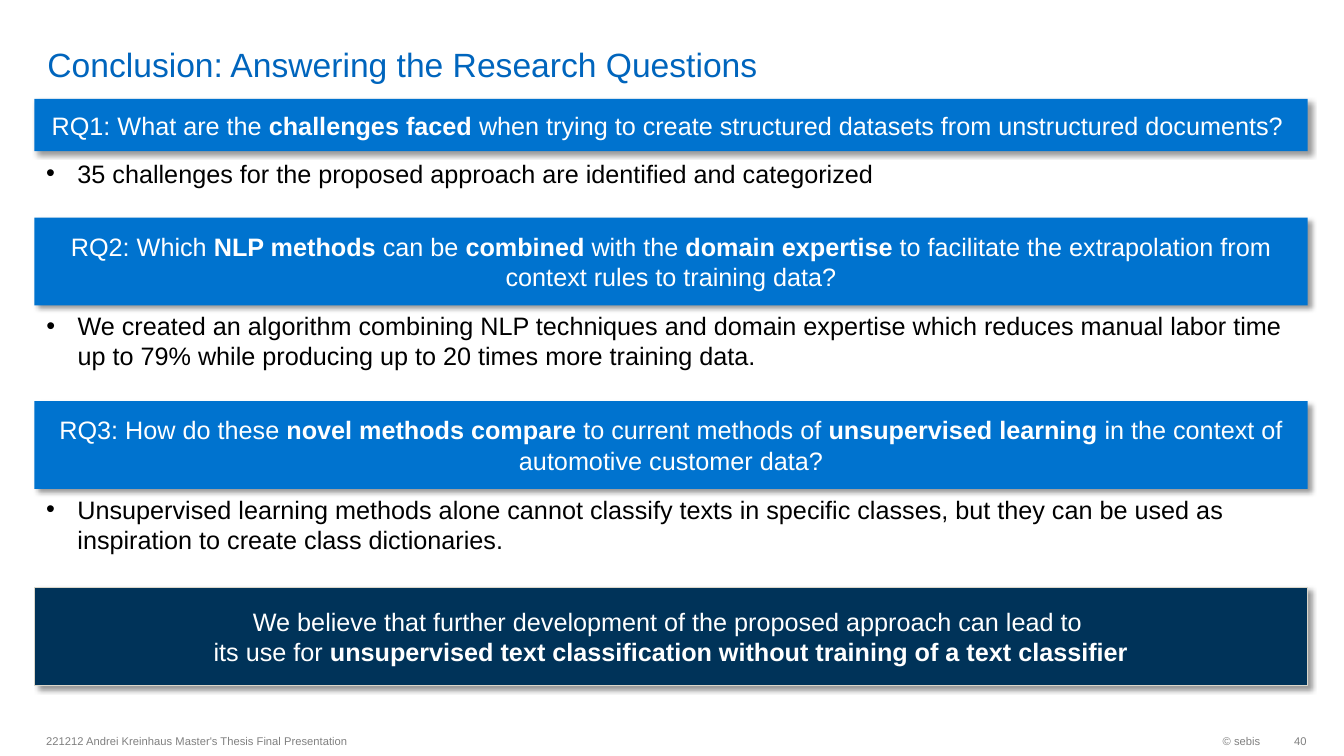
"""Build the conclusion slide that answers the three research questions."""
from dataclasses import dataclass

from lxml import etree
from pptx import Presentation
from pptx.dml.color import RGBColor
from pptx.enum.shapes import MSO_SHAPE
from pptx.enum.text import MSO_ANCHOR, MSO_AUTO_SIZE, PP_ALIGN
from pptx.oxml.ns import qn
from pptx.util import Inches, Pt

RECT = MSO_SHAPE.RECTANGLE
TOP, MIDDLE, BOTTOM = MSO_ANCHOR.TOP, MSO_ANCHOR.MIDDLE, MSO_ANCHOR.BOTTOM
LEFT, CENTER, RIGHT = PP_ALIGN.LEFT, PP_ALIGN.CENTER, PP_ALIGN.RIGHT

TITLE = "Conclusion: Answering the Research Questions"
SECTIONS = [
    {"question": "RQ1: What are the **challenges faced **when trying to create "
                 "structured datasets from unstructured documents? ",
     "answer": "35 challenges for the proposed approach are identified and categorized",
     "band": 0.52, "lead": 0.02, "body": 0.4, "width": 8.64},
    {"question": "RQ2: Which **NLP methods **can be **combined **with the "
                 "**domain expertise **to facilitate the extrapolation from "
                 "context rules to training data?",
     "answer": "We created an algorithm combining NLP techniques and domain expertise "
               "which reduces manual labor time up to 79% while producing up to "
               "20 times more training data.",
     "band": 0.87, "lead": 0, "body": 0.71, "width": 12.6},
    {"question": "RQ3: How do these **novel methods compare** to current methods of "
                 "**unsupervised learning **in the context of automotive customer data?",
     "answer": "Unsupervised learning methods alone cannot classify texts in specific "
               "classes, but they can be used as inspiration to create class dictionaries.",
     "band": 0.87, "lead": 0, "body": 0.71, "width": 12.6},
]
OUTLOOK = [
    "We believe that further development of the proposed approach can lead to ",
    "its use for **unsupervised text classification without training of a text classifier**",
]
FOOTER = [
    ("221212 Andrei Kreinhaus Master's Thesis Final Presentation", 0.36, 6.3, LEFT, 0.1),
    ("© sebis", 10.26, 2.34, RIGHT, 0.1),
    ("40", 12.6, 0.36, RIGHT, 0),
]

SLIDE_W, SLIDE_H = 13.33, 7.5
BAND_X, BAND_W = 0.34, 12.63
TEXT_X = 0.36
FIRST_Y, GAP = 0.98, 0.24
OUTLOOK_H, OUTLOOK_BOTTOM = 0.97, 6.8
FOOTER_Y, FOOTER_H = 7.19, 0.32
INDENT = 0.31


@dataclass(frozen=True)
class Theme:
    """Colours, font and type sizes."""
    font: str = "Arial"
    title: str = "0065BD"
    band: str = "0073CF"
    outlook: str = "003359"
    edge: str = "DAD7CB"
    white: str = "FFFFFF"
    text: str = "000000"
    muted: str = "808080"
    title_size: int = 24
    body_size: int = 18
    footer_size: int = 8


T = Theme()


def place(sp, x, y, w, h):
    """Move and size a shape in inches."""
    sp.left, sp.top, sp.width, sp.height = (Inches(v) for v in (x, y, w, h))
    return sp


def add_bullet(p):
    """Give a paragraph a hanging round bullet."""
    pPr = p._p.get_or_add_pPr()
    pPr.set("marL", str(Inches(INDENT)))
    pPr.set("indent", str(-Inches(INDENT)))
    etree.SubElement(pPr, qn("a:buFont")).set("typeface", T.font)
    etree.SubElement(pPr, qn("a:buChar")).set("char", "•")


def write(sp, lines, size=T.body_size, color=T.text, align=LEFT, anchor=TOP,
          bullet=False, wrap=True, right=0.1, pad=0.05):
    """Write lines into a shape; text between double asterisks is bold."""
    tf = sp.text_frame
    tf.auto_size = MSO_AUTO_SIZE.NONE
    tf.word_wrap = wrap
    tf.vertical_anchor = anchor
    tf.margin_left, tf.margin_right = Inches(0.1), Inches(right)
    tf.margin_top = tf.margin_bottom = Inches(pad)
    for i, line in enumerate(lines):
        p = tf.add_paragraph() if i else tf.paragraphs[0]
        p.alignment = align
        p.space_before = Pt(0)
        if bullet:
            add_bullet(p)
        for j, part in enumerate(line.split("**")):
            if part:
                r = p.add_run()
                r.text = part
                r.font.name, r.font.size = T.font, Pt(size)
                r.font.bold = j % 2 == 1
                r.font.color.rgb = RGBColor.from_string(color)


def add_shadow(sp):
    """Add a soft shadow to the lower right."""
    sp.shadow.inherit = False
    effects = sp._element.spPr.find(qn("a:effectLst"))
    shadow = etree.SubElement(effects, qn("a:outerShdw"), blurRad=str(Pt(4)),
                              dist=str(Pt(3)), dir="2700000", algn="tl", rotWithShape="0")
    clr = etree.SubElement(shadow, qn("a:srgbClr"), val=T.text)
    etree.SubElement(clr, qn("a:alpha"), val="40000")


def add_band(s, lines, y, h, fill, edge=None):
    """Add a full-width coloured band with centred text."""
    sp = place(s.shapes.add_shape(RECT, 0, 0, 0, 0), BAND_X, y, BAND_W, h)
    sp.fill.solid()
    sp.fill.fore_color.rgb = RGBColor.from_string(fill)
    if edge:
        sp.line.color.rgb = RGBColor.from_string(edge)
        sp.line.width = Pt(0.75)
    else:
        sp.line.fill.background()
    add_shadow(sp)
    write(sp, lines, color=T.white, align=CENTER, anchor=MIDDLE)


def main():
    """Build and save the slide."""
    prs = Presentation()
    prs.slide_width, prs.slide_height = Inches(SLIDE_W), Inches(SLIDE_H)
    s = prs.slides.add_slide(prs.slide_layouts[1])

    title = place(s.shapes.title, 0.37, 0.05, 11.58, 0.79)
    write(title, [TITLE], size=T.title_size, color=T.title, anchor=BOTTOM, pad=0)

    y = FIRST_Y
    for i, sec in enumerate(SECTIONS):
        add_band(s, [sec["question"]], y, sec["band"], T.band)
        y += sec["band"] + sec["lead"]
        sp = s.placeholders[1] if i == 1 else s.shapes.add_textbox(0, 0, 0, 0)
        place(sp, TEXT_X, y, sec["width"], sec["body"])
        write(sp, [sec["answer"]], bullet=True)
        y += sec["body"] + GAP

    add_band(s, OUTLOOK, OUTLOOK_BOTTOM - OUTLOOK_H, OUTLOOK_H, T.outlook, T.edge)

    for text, x, w, align, right in FOOTER:
        sp = place(s.shapes.add_textbox(0, 0, 0, 0), x, FOOTER_Y, w, FOOTER_H)
        write(sp, [text], size=T.footer_size, color=T.muted, align=align,
              anchor=MIDDLE, wrap=align == LEFT, right=right)

    prs.save("out.pptx")


if __name__ == "__main__":
    main()
